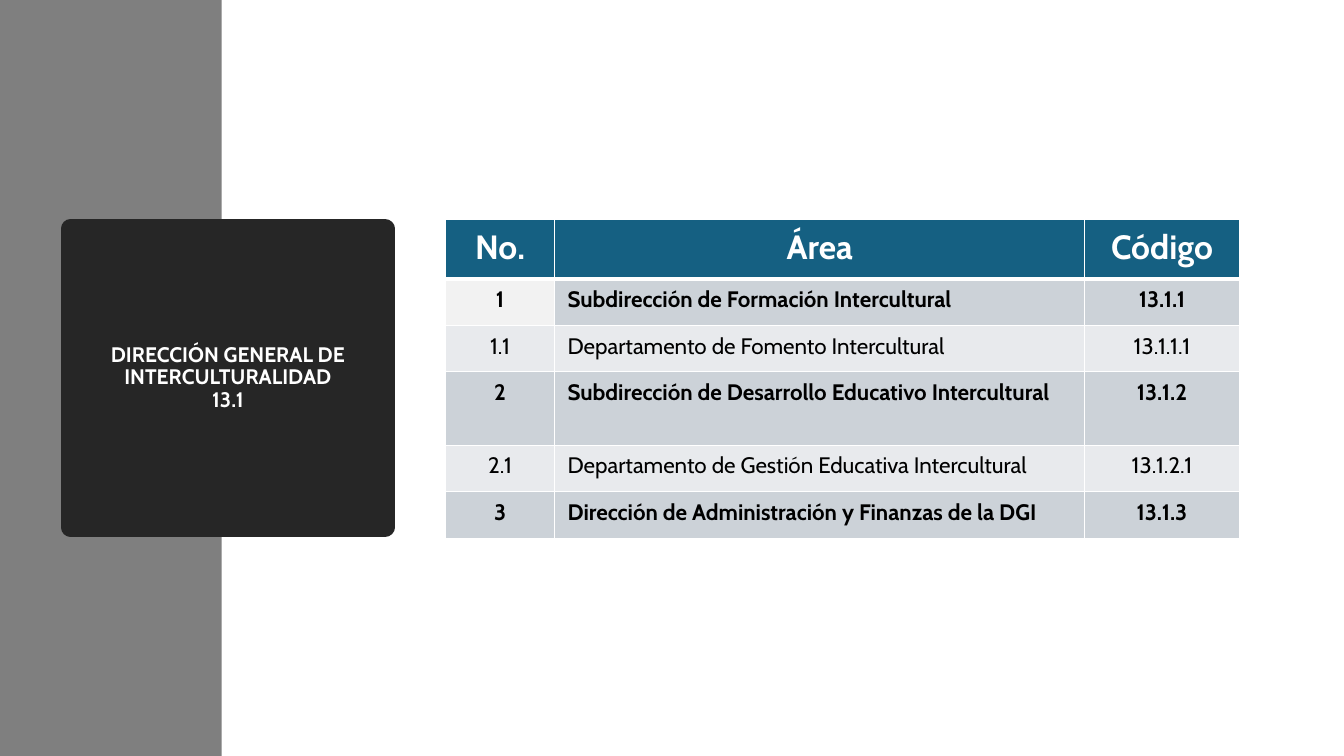
from lxml import etree
from pptx import Presentation
from pptx import util as u
from pptx.dml.color import RGBColor
from pptx.enum import shapes, text
from pptx.oxml import ns

FONT = "Cabin"
WHITE, BLACK, GREY, DARK = "FFFFFF", "000000", "7F7F7F", "262626"
HEADER, MAIN_ROW, SUB_ROW, FIRST_CELL = "156082", "CCD2D8", "E8EAED", "F2F2F2"

COLUMNS = [1.08, 5.26, 1.53]
ROW_HEIGHTS = [0.59, 0.46, 0.46, 0.73, 0.46, 0.46]
HEADINGS = ("No.", "Área", "Código")
AREAS = [
    ("1", "Subdirección de Formación Intercultural", "13.1.1"),
    ("1.1", "Departamento de Fomento Intercultural", "13.1.1.1"),
    ("2", "Subdirección de Desarrollo Educativo Intercultural", "13.1.2"),
    ("2.1", "Departamento de Gestión Educativa Intercultural", "13.1.2.1"),
    ("3", "Dirección de Administración y Finanzas de la DGI", "13.1.3"),
]


def rgb(value):
    return RGBColor.from_string(value)


def paint(item, color):
    item.fill.solid()
    item.fill.fore_color.rgb = rgb(color)


def add_run(p, words, size, color, bold):
    r = p.add_run()
    r.text = words
    r.font.name = FONT
    r.font.size = u.Pt(size)
    r.font.bold = bold
    r.font.color.rgb = rgb(color)


def add_band(s, x, y, w, h):
    """Draw the side band behind the title."""
    sp = s.shapes.add_shape(shapes.MSO_SHAPE.RECTANGLE, *map(u.Inches, (x, y, w, h)))
    sp.shadow.inherit = False
    paint(sp, GREY)
    sp.line.fill.background()
    s.shapes.title._element.addprevious(sp._element)


def place_title(s, x, y, w, h):
    """Format the title as a dark box; its thick round-joined line rounds the corners."""
    sp = s.shapes.title
    sp.left, sp.top, sp.width, sp.height = map(u.Inches, (x, y, w, h))
    paint(sp, DARK)
    paint(sp.line, DARK)
    sp.line.width = u.Pt(13.75)
    etree.SubElement(sp.line._ln, ns.qn("a:round"))
    tf = sp.text_frame
    tf.word_wrap = True
    tf.auto_size = text.MSO_AUTO_SIZE.NONE
    tf.vertical_anchor = text.MSO_ANCHOR.MIDDLE
    p = tf.paragraphs[0]
    p.alignment = text.PP_ALIGN.CENTER
    p.line_spacing = 0.9
    add_run(p, "DIRECCIÓN GENERAL DE INTERCULTURALIDAD", 15, WHITE, True)
    p.add_line_break()
    add_run(p, "13.1", 15, WHITE, True)


def set_borders(cell, top, bottom):
    tcPr = cell._tc.get_or_add_tcPr()
    for side, width in (("L", 1), ("R", 1), ("T", top), ("B", bottom)):
        ln = etree.SubElement(tcPr, ns.qn(f"a:ln{side}"), w=str(u.Pt(width)))
        fill = etree.SubElement(ln, ns.qn("a:solidFill"))
        etree.SubElement(fill, ns.qn("a:srgbClr"), val=WHITE)


def fill_cell(cell, words, size, color, bold, centred, fill):
    cell.margin_left = cell.margin_right = u.Inches(0.13)
    cell.margin_top = cell.margin_bottom = u.Inches(0.07)
    paint(cell, fill)
    p = cell.text_frame.paragraphs[0]
    p.alignment = text.PP_ALIGN.CENTER if centred else text.PP_ALIGN.LEFT
    add_run(p, words, size, color, bold)


def add_area_table(s, x, y):
    rows = [HEADINGS] + AREAS
    size = sum(COLUMNS), sum(ROW_HEIGHTS)
    table = s.shapes.add_table(
        len(rows), len(COLUMNS), *map(u.Inches, (x, y, *size))).table
    for column, width in zip(table.columns, COLUMNS):
        column.width = u.Inches(width)
    for i, (row, height) in enumerate(zip(rows, ROW_HEIGHTS)):
        table.rows[i].height = u.Inches(height)
        header = i == 0
        main = "." not in row[0]
        for j, words in enumerate(row):
            cell = table.cell(i, j)
            set_borders(cell, 3 if i == 1 else 1, 3 if header else 1)
            if header:
                fill_cell(cell, words, 24, WHITE, True, True, HEADER)
            else:
                fill = MAIN_ROW if main else SUB_ROW
                if (i, j) == (1, 0):
                    fill = FIRST_CELL
                fill_cell(cell, words, 16, BLACK, main, j != 1, fill)


def main():
    prs = Presentation()
    prs.slide_width, prs.slide_height = u.Inches(13.33), u.Inches(7.5)
    s = prs.slides.add_slide(prs.slide_layouts[5])
    add_band(s, 0, 0, 2.2, 7.5)
    place_title(s, 0.7, 2.27, 3.12, 2.96)
    add_area_table(s, 4.42, 2.18)
    prs.save("out.pptx")


if __name__ == "__main__":
    main()
